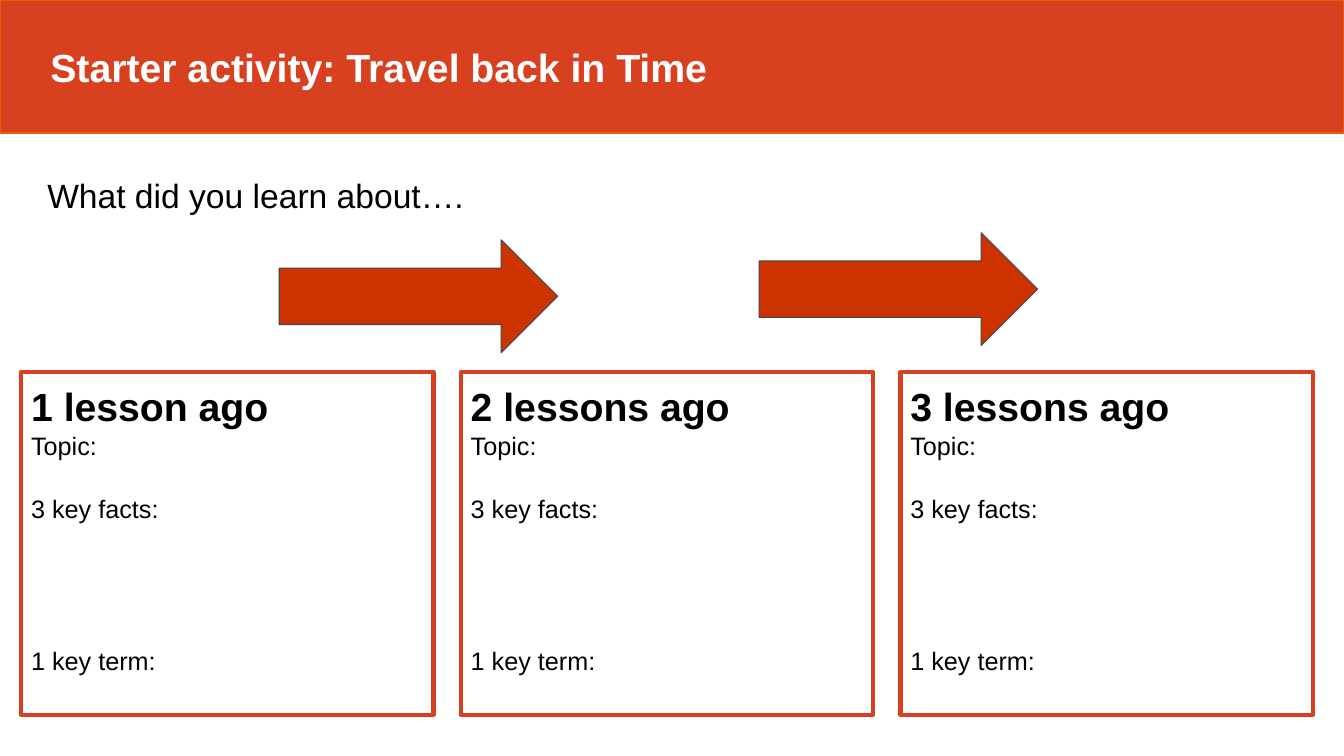
from dataclasses import dataclass

from pptx import Presentation
from pptx.dml.color import RGBColor
from pptx.enum.shapes import MSO_SHAPE
from pptx.enum.text import MSO_ANCHOR, PP_ALIGN
from pptx.util import Inches, Pt

WIDTH, HEIGHT = Inches(13.33), Inches(7.5)


@dataclass(frozen=True)
class Theme:
    font: str = "Arial"
    banner: RGBColor = RGBColor(0xD7, 0x41, 0x20)
    banner_edge: RGBColor = RGBColor(0xEA, 0x5B, 0x0C)
    arrow: RGBColor = RGBColor(0xCC, 0x33, 0x00)
    arrow_edge: RGBColor = RGBColor(0x45, 0x45, 0x51)
    light: RGBColor = RGBColor(0xFF, 0xFF, 0xFF)
    dark: RGBColor = RGBColor(0x00, 0x00, 0x00)
    heading: Pt = Pt(28)
    prompt: Pt = Pt(24)
    body: Pt = Pt(18)


THEME = Theme()
HEADING = {"name": THEME.font, "size": THEME.heading, "bold": True}
PROMPT = {"name": THEME.font, "size": THEME.prompt, "bold": False}
BODY = {"name": THEME.font, "size": THEME.body, "bold": False}

CARD_LEFT, CARD_PITCH = 1.58, 32.71
CARD_TITLES = ("1 lesson ago", "2 lessons ago", "3 lessons ago")
CARD_FIELDS = (("Topic:", 1), ("3 key facts:", 23), ("1 key term:", 87))
ARROW_PLACES = ((20.78, 31.73), (56.49, 30.8))


def set_attributes(target, values):
    for name, value in values.items():
        setattr(target, name, value)


def area(left, top, width, height):
    """Turn percentages of the slide into lengths."""
    return (
        round(WIDTH * left / 100),
        round(HEIGHT * top / 100),
        round(WIDTH * width / 100),
        round(HEIGHT * height / 100),
    )


def add_panel(slide, kind, place, fill, edge, edge_width):
    shape = slide.shapes.add_shape(kind, *area(*place))
    shape.shadow.inherit = False
    if fill is None:
        shape.fill.background()
    else:
        shape.fill.solid()
        shape.fill.fore_color.rgb = fill
    shape.line.color.rgb = edge
    shape.line.width = Pt(edge_width)
    return shape


def write_text(shape, lines, color, frame_format):
    frame = shape.text_frame
    set_attributes(frame, {"word_wrap": True, **frame_format})
    for index, (text, font_format, space) in enumerate(lines):
        paragraph = frame.add_paragraph() if index else frame.paragraphs[0]
        paragraph.alignment = PP_ALIGN.LEFT
        if space:
            paragraph.space_before = Pt(space)
        run = paragraph.add_run()
        run.text = text
        set_attributes(run.font, font_format)
        run.font.color.rgb = color


def add_banner(slide, text):
    banner = add_panel(slide, MSO_SHAPE.RECTANGLE, (0, 0, 100, 17.6),
                       THEME.banner, THEME.banner_edge, 1)
    write_text(banner, [(text, HEADING, 0)], THEME.light,
               {"vertical_anchor": MSO_ANCHOR.MIDDLE, "margin_left": Inches(0.5)})


def add_prompt(slide, text):
    box = slide.shapes.add_textbox(*area(2.78, 22.53, 94.52, 6.67))
    write_text(box, [(text, PROMPT, 0)], THEME.dark,
               {"vertical_anchor": MSO_ANCHOR.TOP})


def add_card(slide, column, title):
    place = (CARD_LEFT + column * CARD_PITCH, 49.2, 30.68, 45.33)
    card = add_panel(slide, MSO_SHAPE.RECTANGLE, place, None, THEME.banner, 3)
    lines = [(title, HEADING, 0)]
    lines += [(text, BODY, space) for text, space in CARD_FIELDS]
    write_text(card, lines, THEME.dark,
               {"vertical_anchor": MSO_ANCHOR.TOP, "margin_top": Inches(0.1),
                "margin_bottom": Inches(0.1)})


def add_arrow(slide, left, top):
    add_panel(slide, MSO_SHAPE.RIGHT_ARROW, (left, top, 20.71, 14.93),
              THEME.arrow, THEME.arrow_edge, 0.75)


def main():
    presentation = Presentation()
    set_attributes(presentation, {"slide_width": WIDTH, "slide_height": HEIGHT})
    slide = presentation.slides.add_slide(presentation.slide_layouts[6])
    add_banner(slide, "Starter activity: Travel back in Time")
    add_prompt(slide, "What did you learn about….")
    for column, title in enumerate(CARD_TITLES):
        add_card(slide, column, title)
    for left, top in ARROW_PLACES:
        add_arrow(slide, left, top)
    presentation.save("out.pptx")


if __name__ == "__main__":
    main()
